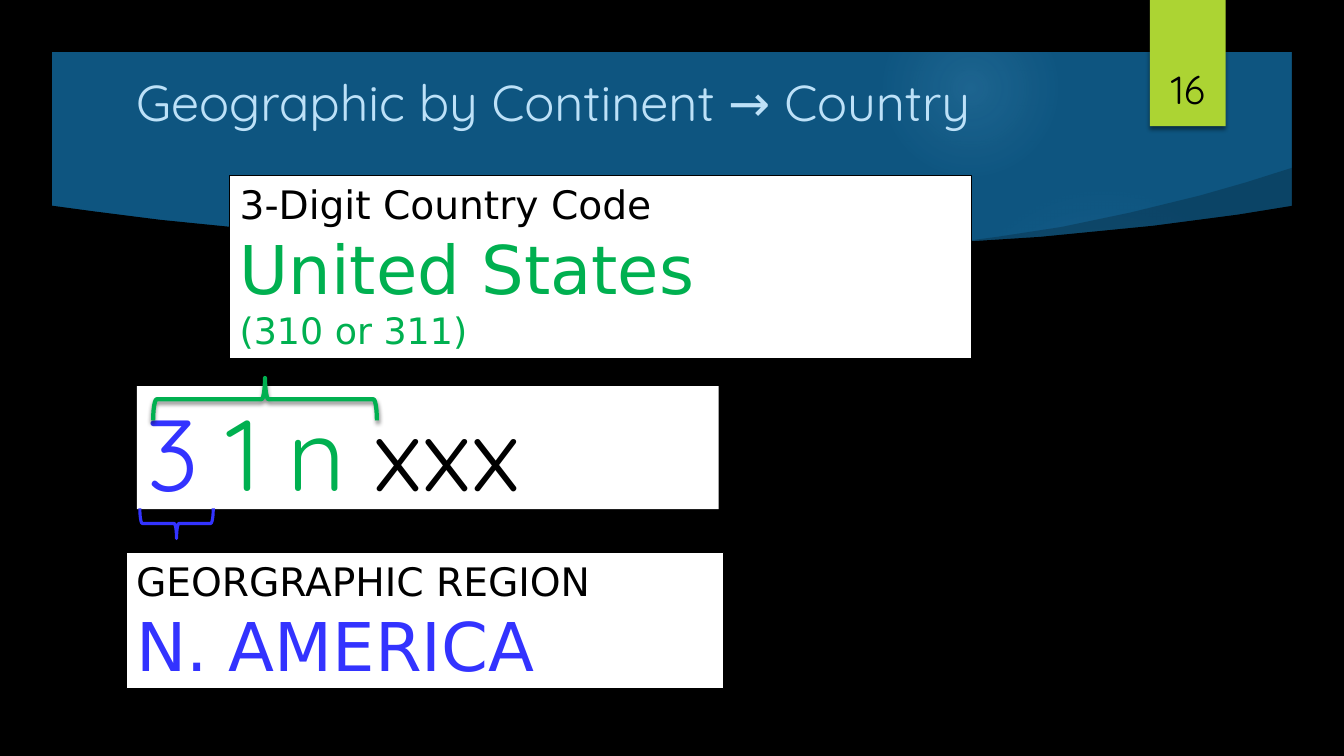
from lxml import etree
from pptx import Presentation
from pptx.dml.color import RGBColor
from pptx.enum.shapes import MSO_SHAPE as Shape
from pptx.enum.text import MSO_ANCHOR as Anchor, PP_ALIGN as Align
from pptx.oxml import parse_xml
from pptx.oxml.ns import nsdecls, qn
from pptx.util import Cm, Pt

BLACK = RGBColor(0x00, 0x00, 0x00)
WHITE = RGBColor(0xFF, 0xFF, 0xFF)
NAVY = RGBColor(0x0E, 0x55, 0x80)
GLOW = RGBColor(0x7A, 0xC4, 0xF0)
LIME = RGBColor(0xAC, 0xD4, 0x33)
PALE_BLUE = RGBColor(0xBD, 0xE1, 0xF8)
BLUE = RGBColor(0x33, 0x33, 0xFF)
GREEN = RGBColor(0x00, 0xB0, 0x50)
DISPLAY_FONT, BODY_FONT = "Quicksand", "DejaVu Sans"

SLIDE_WIDTH, SLIDE_HEIGHT = 33.87, 19.05
MARGIN = 1.31

# Band edges in centimetres from the top left of the backdrop
BAND_EDGE = [
    (1.28, 5.18), (2.39, 5.33), (4.04, 5.54), (6.32, 5.77), (9.14, 5.99),
    (11.28, 6.12), (13.59, 6.22), (16.05, 6.27), (17.98, 6.3), (20.65, 6.25),
    (23.39, 6.15), (26.21, 5.97), (29.06, 5.69), (31.19, 5.41), (32.61, 5.18),
]
FOLD = [
    (23.62, 6.17), (25.12, 5.97), (26.75, 5.72), (28.47, 5.36), (30.23, 4.93),
    (31.39, 4.6), (32.59, 4.22), (32.74, 5.44), (23.72, 6.35),
]


def fill_shape(shape, color):
    shape.shadow.inherit = False
    shape.fill.solid()
    shape.fill.fore_color.rgb = color
    shape.line.fill.background()


def add_preset(slide, kind, box, color):
    shape = slide.shapes.add_shape(kind, *map(Cm, box))
    fill_shape(shape, color)
    return shape


def add_outline(slide, left, top, points, color):
    corners = [(Cm(left + x), Cm(top + y)) for x, y in points]
    builder = slide.shapes.build_freeform(*corners[0])
    builder.add_line_segments(corners[1:], close=True)
    shape = builder.convert_to_shape()
    fill_shape(shape, color)
    return shape


def add_shadow(shape):
    effects = shape._element.spPr.find(qn("a:effectLst"))
    effects.append(parse_xml(
        f'<a:outerShdw {nsdecls("a")} blurRad="38100" dist="25400" dir="5400000">'
        '<a:srgbClr val="000000"><a:alpha val="45000"/></a:srgbClr></a:outerShdw>'))


def add_glow(slide, box, stops):
    shape = add_preset(slide, Shape.OVAL, box, GLOW)
    stop_xml = "".join(
        f'<a:gs pos="{position * 1000}"><a:srgbClr val="{GLOW}">'
        f'<a:alpha val="{alpha * 1000}"/></a:srgbClr></a:gs>'
        for position, alpha in stops)
    gradient = parse_xml(
        f'<a:gradFill {nsdecls("a")}><a:gsLst>{stop_xml}</a:gsLst><a:path path="circle">'
        '<a:fillToRect l="50000" t="50000" r="50000" b="50000"/></a:path></a:gradFill>')
    properties = shape._element.spPr
    properties.replace(properties.find(qn("a:solidFill")), gradient)


def write_text(shape, lines, font_name, anchor=Anchor.TOP, align=Align.LEFT):
    """Each line is a list of (text, size, color) runs."""
    frame = shape.text_frame
    frame.word_wrap = True
    frame.vertical_anchor = anchor
    for index, runs in enumerate(lines):
        paragraph = frame.add_paragraph() if index else frame.paragraphs[0]
        paragraph.alignment = align
        for text, size, color in runs:
            run = paragraph.add_run()
            run.text = text
            run.font.name = font_name
            run.font.size = Pt(size)
            run.font.color.rgb = color


def draw_backdrop(slide, left, top, width, height):
    # Soft lights on the band
    add_glow(slide, (left + 23.9, top + 4.65, 7.82, 7.82), [(0, 7), (36, 6), (69, 0)])
    add_glow(slide, (left + 22.23, top, 4.45, 4.45), [(0, 14), (36, 7), (73, 0)])
    # Darker fold at the right of the band
    fold = add_outline(slide, left, top, FOLD, BLACK)
    color = fold._element.spPr.find(qn("a:solidFill"))[0]
    etree.SubElement(color, qn("a:alpha")).set("val", "20000")
    # Black area below the curve, then the border
    floor = height - MARGIN + 0.04
    corners = [(BAND_EDGE[-1][0], floor), (BAND_EDGE[0][0], floor)]
    add_outline(slide, left, top, BAND_EDGE + corners, BLACK)
    border = add_preset(slide, Shape.FRAME, (left, top, width, height), BLACK)
    border.adjustments[0] = MARGIN / height


def draw_page_tag(slide, left, top, width, height):
    tag = add_preset(slide, Shape.RECTANGLE, (left, top, width, height), LIME)
    add_shadow(tag)
    number = slide.shapes.add_textbox(
        Cm(left - 0.22), Cm(top + 0.81), Cm(width + 0.44), Cm(height - 1.04))
    write_text(number, [[("16", 28, BLACK)]], DISPLAY_FONT, Anchor.BOTTOM, Align.CENTER)


def draw_title(slide, left, top, width, height):
    title = slide.shapes.add_textbox(*map(Cm, (left, top, width, height)))
    write_text(title, [[("Geographic by Continent → Country", 36, PALE_BLUE)]],
               DISPLAY_FONT, Anchor.MIDDLE)


def draw_label(slide, box, lines):
    label = add_preset(slide, Shape.RECTANGLE, box, WHITE)
    label.line.color.rgb = BLACK
    label.line.width = Pt(0.5)
    write_text(label, [[line] for line in lines], BODY_FONT)


def draw_brace(slide, kind, center_x, center_y, depth, span, color, weight):
    box = (center_x - depth / 2, center_y - span / 2, depth, span)
    brace = slide.shapes.add_shape(kind, *map(Cm, box))
    brace.rotation = 270
    brace.shadow.inherit = False
    brace.fill.background()
    brace.line.color.rgb = color
    brace.line.width = Pt(weight)
    add_shadow(brace)


def draw_code(slide, left, top, width, height):
    code = add_preset(slide, Shape.RECTANGLE, (left, top, width, height), WHITE)
    write_text(code, [[("3 ", 72, BLUE), ("1 n ", 72, GREEN), ("xxx", 72, BLACK)]],
               DISPLAY_FONT)
    # Braces for the region digit and the country code
    draw_brace(slide, Shape.LEFT_BRACE, left + 1, top + height + 0.36,
               0.76, 1.85, BLUE, 2.25)
    draw_brace(slide, Shape.RIGHT_BRACE, left + 3.23, top + 0.33,
               1.07, 5.64, GREEN, 3)


def main():
    presentation = Presentation()
    presentation.slide_width = Cm(SLIDE_WIDTH)
    presentation.slide_height = Cm(SLIDE_HEIGHT)
    slide = presentation.slides.add_slide(presentation.slide_layouts[6])
    slide.background.fill.solid()
    slide.background.fill.fore_color.rgb = NAVY

    draw_backdrop(slide, 0, 0, SLIDE_WIDTH, SLIDE_HEIGHT)
    draw_page_tag(slide, 28.98, 0, 1.91, 3.18)
    draw_title(slide, 3.18, 1.58, 24.33, 1.96)
    draw_code(slide, 3.45, 9.73, 14.66, 3.1)
    draw_label(slide, (3.18, 13.92, 15.06, 3.43), [
        ("GEORGRAPHIC REGION", 28, BLACK), ("N. AMERICA", 48, BLUE)])
    draw_label(slide, (5.79, 4.42, 18.69, 4.6), [
        ("3-Digit Country Code", 28, BLACK), ("United States", 48, GREEN),
        ("(310 or 311)", 26, GREEN)])
    presentation.save("out.pptx")


if __name__ == "__main__":
    main()
